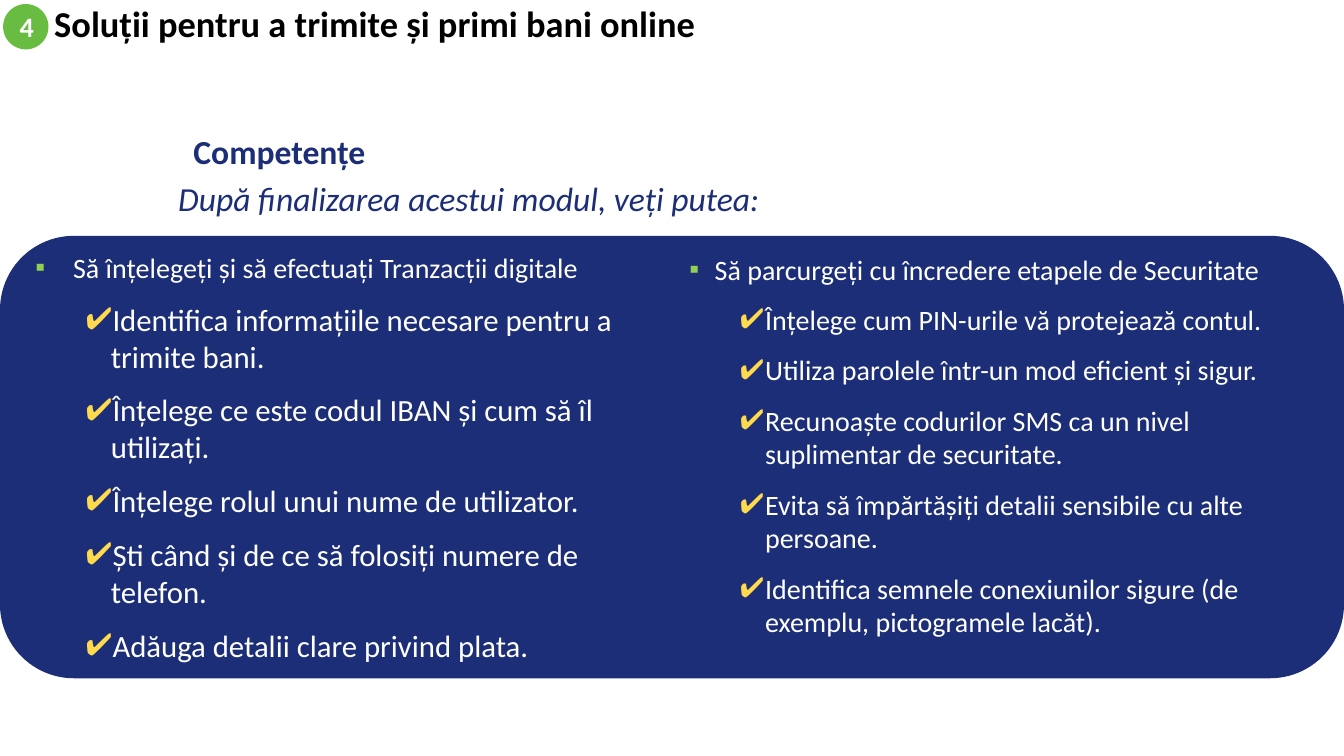
"""Build the skills slide of the module on sending and receiving money online."""
import pptx
import pptx.dml.color
import pptx.enum.shapes
import pptx.enum.text
import pptx.oxml
import pptx.oxml.ns
import pptx.util

Pt = pptx.util.Pt
ALIGN = pptx.enum.text.PP_ALIGN
ANCHOR = pptx.enum.text.MSO_ANCHOR
SHAPE = pptx.enum.shapes.MSO_SHAPE
NAVY, WHITE, GREEN = "1C2E78", "FFFFFF", "68BC42"


def rgb(color):
    return pptx.dml.color.RGBColor.from_string(color)


def write(tf, text, size=20, color=WHITE, bold=False, italic=False, align=ALIGN.LEFT,
          anchor=ANCHOR.TOP, spacing=1.0, before=0, level=0, bullet=None, indent=0, hang=0):
    tf.word_wrap = True
    tf.auto_size = pptx.enum.text.MSO_AUTO_SIZE.NONE
    tf.vertical_anchor = anchor
    p = tf.add_paragraph() if tf.text else tf.paragraphs[0]
    if bullet:
        char, bullet_color = bullet
        pPr = p._p.get_or_add_pPr()
        pPr.set("marL", str(Pt(indent)))
        pPr.set("indent", str(-Pt(hang)))
        ns = pptx.oxml.ns.nsdecls("a")
        for xml in (f'<a:buClr {ns}><a:srgbClr val="{bullet_color}"/></a:buClr>',
                    f'<a:buChar {ns} char="{char}"/>'):
            pPr.append(pptx.oxml.parse_xml(xml))
    p.level = level
    p.alignment = align
    p.line_spacing = spacing
    p.space_before = Pt(before)
    r = p.add_run()
    r.text = text
    r.font.name = "Calibri"
    r.font.size = Pt(size)
    r.font.bold = bold
    r.font.italic = italic
    r.font.color.rgb = rgb(color)


prs = pptx.Presentation()
prs.slide_width, prs.slide_height = Pt(960), Pt(540)
s = prs.slides.add_slide(prs.slide_layouts[3])
title, left, right = list(s.placeholders)[:3]
for sp in list(s.placeholders)[3:]:
    sp.element.getparent().remove(sp.element)

panel = s.shapes.add_shape(SHAPE.ROUNDED_RECTANGLE, Pt(0), Pt(168.5), Pt(960), Pt(316))
panel.adjustments[0] = 0.167
badge = s.shapes.add_shape(SHAPE.OVAL, Pt(2.2), Pt(2.9), Pt(32.4), Pt(32.4))
for sp, color in ((panel, NAVY), (badge, GREEN)):
    sp.shadow.inherit = False
    sp.fill.solid()
    sp.fill.fore_color.rgb = rgb(color)
    sp.line.fill.background()
panel.element.getparent().insert(2, panel.element)
write(badge.text_frame, "4", bold=True, align=ALIGN.CENTER, anchor=ANCHOR.MIDDLE)

title.left, title.top, title.width, title.height = Pt(131), Pt(85), Pt(741), Pt(49)
write(title.text_frame, "Competențe", size=24, color=NAVY, bold=True,
      anchor=ANCHOR.MIDDLE, spacing=0.9)

module = s.shapes.add_textbox(Pt(31.7), Pt(2.9), Pt(576), Pt(32.4))
write(module.text_frame, "Soluții pentru a trimite și primi bani online", size=26,
      color="000000", bold=True, anchor=ANCHOR.MIDDLE, spacing=0.8)

intro = s.shapes.add_textbox(Pt(120.2), Pt(123.8), Pt(480), Pt(36))
write(intro.text_frame, "După finalizarea acestui modul, veți putea:", size=24,
      color=NAVY, italic=True)

columns = [
    (left, (18, 175, 467, 298), 27, 22, "Să înțelegeți și să efectuați Tranzacții digitale", [
        "Identifica informațiile necesare pentru a trimite bani.",
        "Înțelege ce este codul IBAN și cum să îl utilizați.",
        "Înțelege rolul unui nume de utilizator.",
        "Ști când și de ce să folosiți numere de telefon.",
        "Adăuga detalii clare privind plata.",
    ]),
    (right, (485.3, 176.4, 457, 291), 18, 20, "Să parcurgeți cu încredere etapele de Securitate", [
        "Înțelege cum PIN-urile vă protejează contul.",
        "Utiliza parolele într-un mod eficient și sigur.",
        "Recunoaște codurilor SMS ca un nivel suplimentar de securitate.",
        "Evita să împărtășiți detalii sensibile cu alte persoane.",
        "Identifica semnele conexiunilor sigure (de exemplu, pictogramele lacăt).",
    ]),
]
for sp, box, indent, size, heading, skills in columns:
    sp.left, sp.top, sp.width, sp.height = map(Pt, box)
    tf = sp.text_frame
    write(tf, heading, bullet=("▪", "92D050"), indent=indent, hang=indent)
    for skill in skills:
        write(tf, skill, size=size, before=12, level=1, bullet=("✔", "FFDA4C"),
              indent=54, hang=18)

prs.save("out.pptx")
